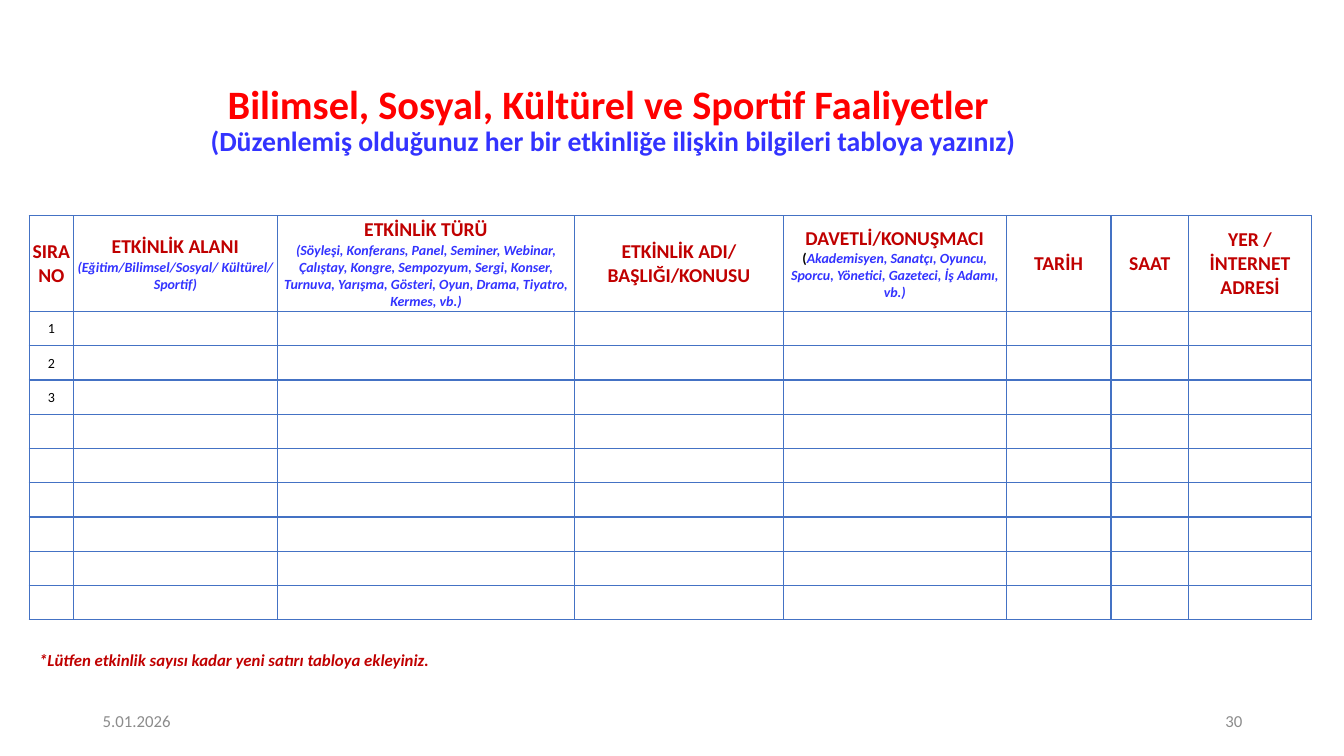
from lxml.etree import SubElement
from pptx import Presentation
from pptx.dml.color import RGBColor
from pptx.enum.text import MSO_ANCHOR, PP_ALIGN
from pptx.oxml.ns import qn
from pptx.util import Inches, Pt

RED = RGBColor(0xFF, 0x00, 0x00)
DARK_RED = RGBColor(0xC0, 0x00, 0x00)
BLUE = RGBColor(0x33, 0x33, 0xFF)
GRAY = RGBColor(0x8C, 0x8C, 0x8C)
BLACK = RGBColor(0x00, 0x00, 0x00)
BORDER = RGBColor(0x44, 0x72, 0xC4)
FONT = "Calibri"

# Text styles: size, colour, bold, italic
TITLE = (28.8, RED, True, False)
SUBTITLE = (19.8, BLUE, True, False)
HEADING = (14, DARK_RED, True, False)
HINT = (10, BLUE, True, True)
BRACKET = (10, BLACK, True, False)
NUMBER = (10, BLACK, False, False)
FOOTNOTE = (12, DARK_RED, True, True)
FOOTER = (12, GRAY, False, False)

# Content: each paragraph is a list of (text, style)
title = [
    ("Bilimsel, Sosyal, Kültürel ve Sportif Faaliyetler \v", TITLE),
    ("(Düzenlemiş olduğunuz her bir etkinliğe ilişkin bilgileri tabloya yazınız)", SUBTITLE),
]
footnote = [("*Lütfen etkinlik sayısı kadar yeni satırı tabloya ekleyiniz.", FOOTNOTE)]
date = [("5.01.2026", FOOTER)]
page_number = [("30", FOOTER)]

# Columns: width, heading paragraphs
columns = [
    (0.44, [[("SIRA NO", HEADING)]]),
    (2.02, [[("ETKİNLİK ALANI ", HEADING),
             ("(Eğitim/Bilimsel/Sosyal/ Kültürel/ Sportif)", HINT)]]),
    (2.95, [[("ETKİNLİK TÜRÜ", HEADING)],
            [("(Söyleşi, Konferans, Panel, Seminer, Webinar, Çalıştay, Kongre, "
              "Sempozyum, Sergi, Konser, Turnuva, Yarışma, Gösteri, Oyun, Drama, "
              "Tiyatro, Kermes, vb.)", HINT)]]),
    (2.07, [[("ETKİNLİK ADI/ BAŞLIĞI/KONUSU", HEADING)]]),
    (2.21, [[("DAVETLİ/KONUŞMACI ", HEADING), ("(", BRACKET),
             ("Akademisyen, Sanatçı, Oyuncu, Sporcu, Yönetici, Gazeteci, "
              "İş Adamı, vb.)", HINT)]]),
    (1.04, [[("TARİH", HEADING)]]),
    (0.77, [[("SAAT", HEADING)]]),
    (1.22, [[("YER / İNTERNET ADRESİ", HEADING)]]),
]
row_numbers = ["1", "2", "3"]
ENTRY_ROWS = 9
HEADER_HEIGHT, ENTRY_HEIGHT = 0.95, 0.34


def write_paragraph(paragraph, pieces, align):
    paragraph.alignment = align
    for text, (size, color, bold, italic) in pieces:
        run = paragraph.add_run()
        run.text = text.rstrip("\v")
        run.font.name = FONT
        run.font.size = Pt(size)
        run.font.color.rgb = color
        run.font.bold = bold
        run.font.italic = italic
        if text.endswith("\v"):
            paragraph.add_line_break()


def add_text(slide, left, top, width, height, pieces,
             align=PP_ALIGN.LEFT, anchor=MSO_ANCHOR.MIDDLE):
    frame = slide.shapes.add_textbox(
        Inches(left), Inches(top), Inches(width), Inches(height)).text_frame
    frame.word_wrap = True
    frame.vertical_anchor = anchor
    write_paragraph(frame.paragraphs[0], pieces, align)
    return frame


def fill_cell(cell, paragraphs):
    cell.margin_left = cell.margin_top = cell.margin_right = Inches(0.01)
    cell.margin_bottom = 0
    cell.vertical_anchor = MSO_ANCHOR.MIDDLE
    frame = cell.text_frame
    for index, pieces in enumerate(paragraphs):
        paragraph = frame.add_paragraph() if index else frame.paragraphs[0]
        write_paragraph(paragraph, pieces, PP_ALIGN.CENTER)
    # Borders come before the fill in the cell properties
    properties = cell._tc.get_or_add_tcPr()
    for side in ("a:lnL", "a:lnR", "a:lnT", "a:lnB"):
        line = SubElement(properties, qn(side), w=str(Pt(1)))
        solid = SubElement(line, qn("a:solidFill"))
        SubElement(solid, qn("a:srgbClr"), val=str(BORDER))
    cell.fill.background()


def add_activity_table(slide):
    widths = [width for width, _ in columns]
    heights = [HEADER_HEIGHT] + [ENTRY_HEIGHT] * ENTRY_ROWS
    table = slide.shapes.add_table(
        len(heights), len(widths), Inches(0.29), Inches(2.14),
        Inches(sum(widths)), Inches(sum(heights))).table
    table.horz_banding = False
    for column, width in zip(table.columns, widths):
        column.width = Inches(width)
    for row, height in zip(table.rows, heights):
        row.height = Inches(height)

    blank = [[]]
    entries = [[[(number, NUMBER)]] for number in row_numbers]
    entries += [blank] * (ENTRY_ROWS - len(entries))
    grid = [[heading for _, heading in columns]]
    grid += [[entry] + [blank] * (len(columns) - 1) for entry in entries]
    for row, contents in zip(table.rows, grid):
        for cell, paragraphs in zip(row.cells, contents):
            fill_cell(cell, paragraphs)


def main():
    presentation = Presentation()
    presentation.slide_width = Inches(13.33)
    presentation.slide_height = Inches(7.5)
    slide = presentation.slides.add_slide(presentation.slide_layouts[6])

    # Title
    heading = add_text(slide, 0.39, 0.76, 11.38, 0.88, title, PP_ALIGN.CENTER)
    heading.paragraphs[0].line_spacing = 0.9

    # Table and footnote
    add_activity_table(slide)
    add_text(slide, 0.29, 6.4, 5, 0.3, footnote, anchor=MSO_ANCHOR.TOP)

    # Footer
    add_text(slide, 0.92, 6.95, 3, 0.4, date)
    add_text(slide, 9.42, 6.95, 3, 0.4, page_number, PP_ALIGN.RIGHT)

    presentation.save("out.pptx")


if __name__ == "__main__":
    main()
